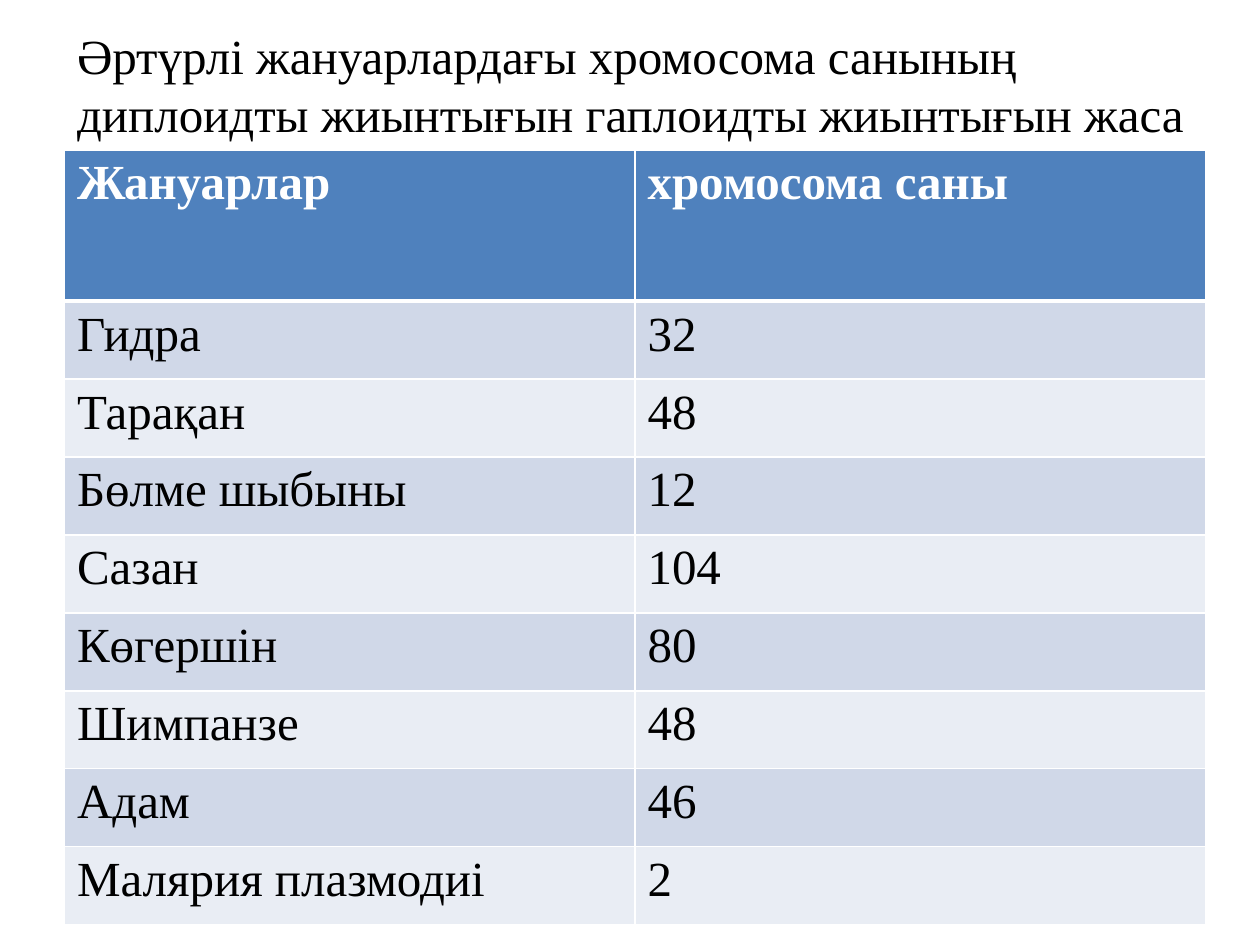
import pptx
import pptx.dml.color
import pptx.enum.text
import pptx.oxml
import pptx.oxml.ns
import pptx.util
from pptx.util import Cm

TITLE = "Әртүрлі жануарлардағы хромосома санының диплоидты жиынтығын гаплоидты жиынтығын жаса"
ROWS = [
    ("Жануарлар", "хромосома саны"),
    ("Гидра", "32"),
    ("Тарақан", "48"),
    ("Бөлме шыбыны", "12"),
    ("Сазан", "104"),
    ("Көгершін", "80"),
    ("Шимпанзе", "48"),
    ("Адам", "46"),
    ("Малярия плазмодиі", "2"),
]
HEADER_FILL = "4F81BD"
BAND_FILLS = ("E9EDF4", "D0D8E8")
FONT = {"name": "Times New Roman", "size": pptx.util.Pt(28)}
TITLE_FRAME = {
    "word_wrap": True,
    "auto_size": pptx.enum.text.MSO_AUTO_SIZE.SHAPE_TO_FIT_TEXT,
    "vertical_anchor": pptx.enum.text.MSO_ANCHOR.TOP,
}


def set_all(target, values):
    for name, value in values.items():
        setattr(target, name, value)


def paint(color_format, hex_color):
    color_format.rgb = pptx.dml.color.RGBColor.from_string(hex_color)


def write_text(frame, text, color, bold=False):
    para = frame.paragraphs[0]
    para.alignment = pptx.enum.text.PP_ALIGN.LEFT
    span = para.add_run()
    span.text = text
    set_all(span.font, {**FONT, "bold": bold})
    paint(span.font.color, color)


def add_borders(cell, widths):
    """Draw white cell borders; widths maps a side (L, R, T, B) to points."""
    properties = cell._tc.get_or_add_tcPr()
    for side, points in widths.items():
        properties.append(pptx.oxml.parse_xml(
            f'<a:ln{side} {pptx.oxml.ns.nsdecls("a")} w="{pptx.util.Pt(points)}">'
            '<a:solidFill><a:srgbClr val="FFFFFF"/></a:solidFill>'
            f'</a:ln{side}>'))


def place_title(page, box):
    title = page.shapes.title
    set_all(title, dict(zip(("left", "top", "width", "height"), box)))
    set_all(title.text_frame, TITLE_FRAME)
    write_text(title.text_frame, TITLE, "000000")


def place_table(page, box, header_height):
    left, top, width, height = box
    table = page.shapes.add_table(len(ROWS), len(ROWS[0]), left, top, width, height).table
    for column in table.columns:
        column.width = width // len(ROWS[0])
    body_height = (height - header_height) // (len(ROWS) - 1)
    for row_index, texts in enumerate(ROWS):
        is_header = row_index == 0
        table.rows[row_index].height = header_height if is_header else body_height
        borders = {"L": 1, "R": 1,
                   "T": 3 if row_index == 1 else 1,
                   "B": 3 if is_header else 1}
        for column_index, text in enumerate(texts):
            cell = table.cell(row_index, column_index)
            add_borders(cell, borders)
            cell.fill.solid()
            paint(cell.fill.fore_color, HEADER_FILL if is_header else BAND_FILLS[row_index % 2])
            write_text(cell.text_frame, text, "FFFFFF" if is_header else "000000", is_header)


def main():
    deck = pptx.Presentation()
    set_all(deck, {"slide_width": Cm(25.4), "slide_height": Cm(19.05)})
    page = deck.slides.add_slide(deck.slide_layouts.get_by_name("Title Only"))
    place_title(page, (Cm(1.3), Cm(0.38), Cm(24.1), Cm(2.64)))
    place_table(page, (Cm(1.3), Cm(3.02), Cm(23), Cm(15.62)), header_height=Cm(3.05))
    deck.save("out.pptx")


if __name__ == "__main__":
    main()
